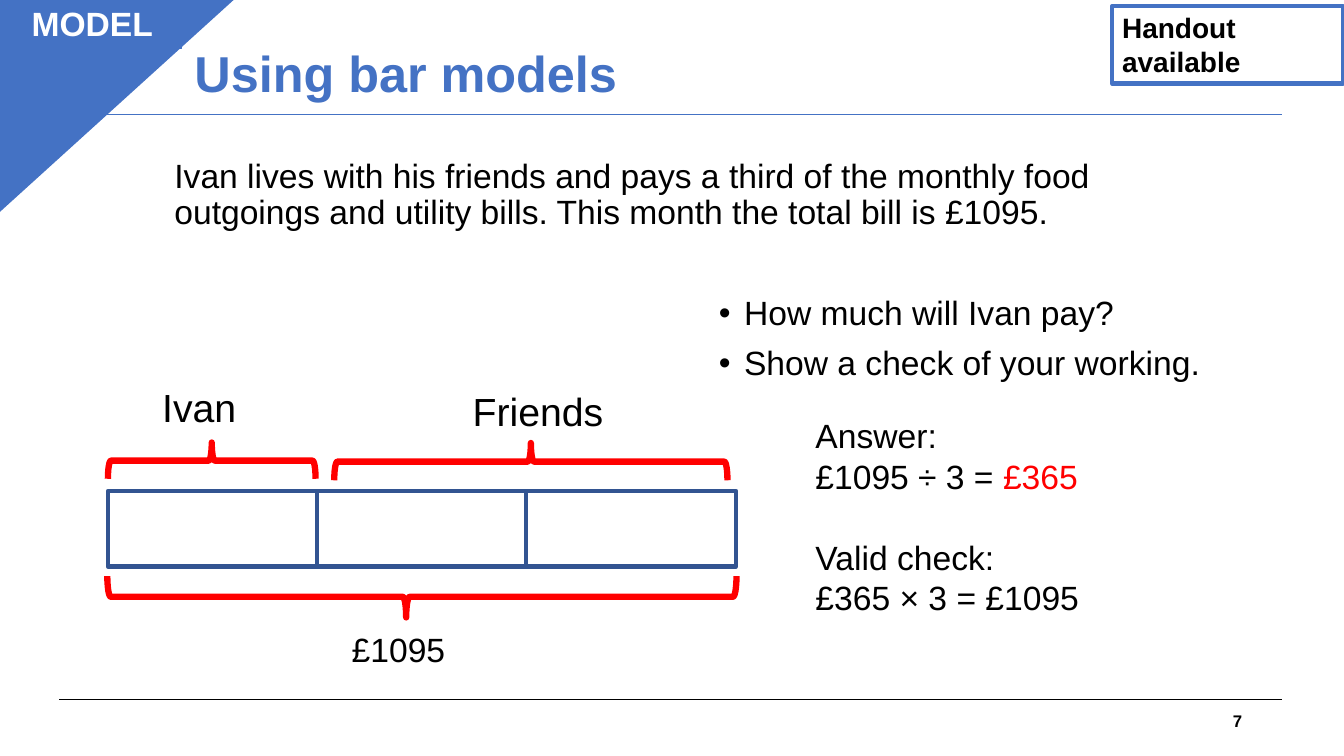
from lxml import etree
from pptx import Presentation
from pptx.dml.color import RGBColor
from pptx.enum.shapes import MSO_CONNECTOR, MSO_SHAPE
from pptx.enum.text import MSO_ANCHOR, MSO_AUTO_SIZE, PP_ALIGN
from pptx.oxml.ns import qn
from pptx.util import Pt

PX = 9144
BLACK = RGBColor(0x00, 0x00, 0x00)
WHITE = RGBColor(0xFF, 0xFF, 0xFF)
BLUE = RGBColor(0x44, 0x72, 0xC4)
NAVY = RGBColor(0x32, 0x54, 0x91)
RED = RGBColor(0xFF, 0x00, 0x00)


def write(box, lines, size, color=BLACK, bold=False, anchor=MSO_ANCHOR.TOP, **layout):
    frame = box.text_frame
    settings = {"word_wrap": True, "auto_size": MSO_AUTO_SIZE.NONE, "vertical_anchor": anchor}
    for name, value in settings.items():
        setattr(frame, name, value)
    frame.text = "\n".join(lines)
    for para in frame.paragraphs:
        for name, value in ({"alignment": PP_ALIGN.LEFT, "space_before": Pt(0)} | layout).items():
            setattr(para, name, value)
        for span in para.runs:
            for name, value in {"name": "Arial", "size": Pt(size), "bold": bold}.items():
                setattr(span.font, name, value)
            span.font.color.rgb = color
    return frame.paragraphs


def draw(kind, bounds, line, width, fill=None):
    shape = page.shapes.add_shape(kind, *[value * PX for value in bounds])
    shape.shadow.inherit = False
    shape.line.color.rgb = line
    shape.line.width = Pt(width)
    if fill is None:
        shape.fill.background()
    else:
        shape.fill.solid()
        shape.fill.fore_color.rgb = fill
    return shape


deck = Presentation()
deck.slide_width, deck.slide_height = 1333 * PX, 750 * PX
page = deck.slides.add_slide(deck.slide_layouts[1])

problem = page.shapes.title
questions = page.placeholders[1]
for box, bounds in [(problem, (163, 153, 979, 145)), (questions, (703, 289, 589, 128))]:
    box.left, box.top, box.width, box.height = [value * PX for value in bounds]

write(problem, ["Ivan lives with his friends and pays a third of the monthly food "
                "outgoings and utility bills. This month the total bill is £1095."],
      24, line_spacing=0.9)
question_paras = write(questions, ["How much will Ivan pay?", "Show a check of your working."],
                       24, line_spacing=0.9)
question_paras[1].space_before = Pt(10)
for para in question_paras:
    properties = para._p.get_or_add_pPr()
    properties.set("marL", str(25 * PX))
    properties.set("indent", str(-25 * PX))
    etree.SubElement(properties, qn("a:buFont")).set("typeface", "Arial")
    etree.SubElement(properties, qn("a:buChar")).set("char", "•")

for y, color in [(694, BLACK), (114, BLUE)]:
    rule = page.shapes.add_connector(MSO_CONNECTOR.STRAIGHT, 59 * PX, y * PX, 1272 * PX, y * PX)
    rule.line.color.rgb = color
    rule.line.width = Pt(0.75)
    etree.SubElement(rule._element.spPr, qn("a:effectLst"))

corner = draw(MSO_SHAPE.ISOSCELES_TRIANGLE, (-3, -2, 236, 214), BLUE, 1, BLUE)
corner.adjustments[0] = 0
corner._element.spPr.find(qn("a:xfrm")).set("flipV", "1")

tag = draw(MSO_SHAPE.RECTANGLE, (3, -2, 177, 50), BLUE, 0.75, BLUE)
write(tag, ["MODEL"], 24, WHITE, True, alignment=PP_ALIGN.CENTER)
handout = draw(MSO_SHAPE.RECTANGLE, (1103, 6, 229, 77), BLUE, 3)
write(handout, ["Handout\vavailable"], 20, bold=True)

for third in range(3):
    draw(MSO_SHAPE.RECTANGLE, (107 + third * 415 // 2, 487, 208, 75), NAVY, 3, WHITE)

for bounds, rotation, point in [
    ((398, 280, 41, 624), 270, 0.475),
    ((192, 354, 36, 206), 90, 0.5),
    ((508, 263, 37, 390), 90, 0.5),
]:
    brace = draw(MSO_SHAPE.LEFT_BRACE, bounds, RED, 4.5)
    brace.rotation = rotation
    brace.adjustments[1] = point

heading_format = {"color": BLUE, "bold": True, "anchor": MSO_ANCHOR.MIDDLE, "line_spacing": 0.9}
number_format = {"bold": True, "anchor": MSO_ANCHOR.MIDDLE, "alignment": PP_ALIGN.RIGHT}
for bounds, text, size, text_format in [
    ((183, 12, 978, 128), "Using bar models", 36, heading_format),
    ((151, 375, 102, 57), "Ivan", 28, {}),
    ((459, 379, 157, 57), "Friends", 28, {}),
    ((339, 619, 159, 50), "£1095", 24, {}),
    ((942, 695, 300, 40), "7", 12, number_format),
]:
    label = page.shapes.add_textbox(*[value * PX for value in bounds])
    write(label, [text], size, **text_format)

answer = page.shapes.add_textbox(799 * PX, 407 * PX, 506 * PX, 212 * PX)
answer_paras = write(answer, ["Answer:", "£1095 ÷ 3 = ", "Valid check:", "£365 × 3 = £1095"], 24)
answer_paras[2].space_before = Pt(29)
result = answer_paras[1].add_run()
result.text = "£365"
result.font.name = "Arial"
result.font.size = Pt(24)
result.font.color.rgb = RED

deck.save("out.pptx")
